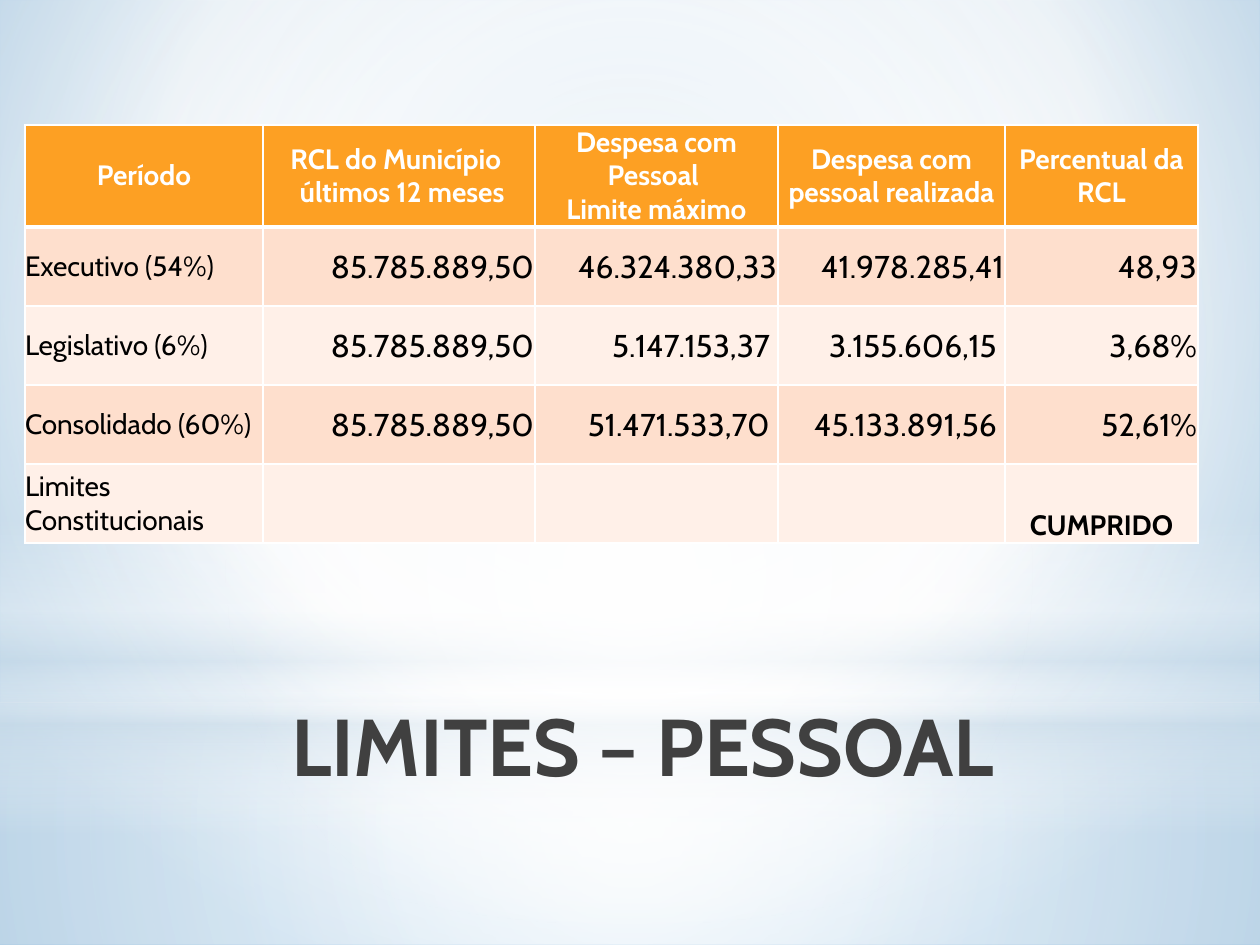
"""Build the slide on personnel spending limits."""
from dataclasses import dataclass

from lxml import etree
from pptx import Presentation
from pptx.dml.color import RGBColor
from pptx.enum.shapes import MSO_SHAPE
from pptx.enum.text import MSO_ANCHOR, PP_ALIGN
from pptx.oxml.ns import qn
from pptx.util import Emu, Pt

RECTANGLE, OVAL = MSO_SHAPE.RECTANGLE, MSO_SHAPE.OVAL
LEFT, CENTER, RIGHT = PP_ALIGN.LEFT, PP_ALIGN.CENTER, PP_ALIGN.RIGHT
TOP, MIDDLE, BOTTOM = MSO_ANCHOR.TOP, MSO_ANCHOR.MIDDLE, MSO_ANCHOR.BOTTOM
EMU_PER_PX = 914400 / 126
FONT = "Cabin"

WHITE = RGBColor(0xFF, 0xFF, 0xFF)
BLACK = RGBColor(0x00, 0x00, 0x00)
CHARCOAL = RGBColor(0x40, 0x40, 0x40)
ORANGE = RGBColor(0xFD, 0xA0, 0x23)
PEACH = RGBColor(0xFE, 0xDF, 0xCD)
CREAM = RGBColor(0xFF, 0xF0, 0xE8)
MIST = RGBColor(0xCC, 0xDD, 0xEA)
PALE_BLUE = RGBColor(0xBC, 0xD5, 0xE8)
SKY = RGBColor(0x82, 0xB6, 0xDE)


@dataclass(frozen=True)
class Stop:
    position: int
    color: RGBColor
    opacity: int = 100


@dataclass(frozen=True)
class Gradient:
    stops: tuple[Stop, ...]
    focus: tuple[int, int, int, int] | None = (50, 50, 50, 50)


@dataclass(frozen=True)
class Glow:
    kind: MSO_SHAPE
    box: tuple[int, int, int, int]
    gradient: Gradient


@dataclass(frozen=True)
class TextStyle:
    size: int
    color: RGBColor
    bold: bool
    align: PP_ALIGN
    anchor: MSO_ANCHOR
    inset: int = 0


BACKDROP = Gradient((Stop(0, PALE_BLUE), Stop(60, WHITE), Stop(100, SKY)), (20, 10, 20, 60))
GLOWS = (
    Glow(RECTANGLE, (0, 703, 1260, 242),
         Gradient((Stop(0, WHITE, 91), Stop(37, WHITE, 76), Stop(100, MIST, 79)))),
    Glow(RECTANGLE, (0, 0, 1260, 703),
         Gradient((Stop(0, WHITE, 89), Stop(48, WHITE, 62), Stop(100, MIST, 79)))),
    Glow(RECTANGLE, (0, 519, 1260, 315),
         Gradient((Stop(0, WHITE, 0), Stop(29, WHITE, 30), Stop(45, MIST, 40),
                   Stop(55, WHITE, 26), Stop(65, MIST, 60), Stop(100, WHITE, 0)), None)),
    Glow(OVAL, (0, 220, 1260, 703), Gradient((Stop(0, WHITE), Stop(56, WHITE, 0)))),
)

TITLE_STYLE = TextStyle(46, CHARCOAL, True, CENTER, TOP)
HEADER_STYLE = TextStyle(16, WHITE, True, CENTER, MIDDLE)
LABEL_STYLE = TextStyle(16, BLACK, False, LEFT, MIDDLE)
NUMBER_STYLE = TextStyle(18, BLACK, False, RIGHT, MIDDLE, 1)
VERDICT_STYLE = TextStyle(16, BLACK, True, CENTER, BOTTOM)

COLUMN_WIDTHS = (238, 272, 243, 227, 193)
ROW_HEIGHTS = (102, 79, 79, 79, 79)
ROWS = (
    ("Período", "RCL do Município \n últimos 12 meses", "Despesa com Pessoal \nLimite máximo",
     "Despesa com pessoal realizada", "Percentual da RCL"),
    ("Executivo (54%)", "85.785.889,50", "46.324.380,33", "41.978.285,41", "48,93"),
    ("Legislativo (6%)", "85.785.889,50", "5.147.153,37 ", "3.155.606,15 ", "3,68%"),
    ("Consolidado (60%)", "85.785.889,50", "51.471.533,70 ", "45.133.891,56 ", "52,61%"),
    ("Limites Constitucionais", "", "", "", "CUMPRIDO"),
)


def px(length: int) -> Emu:
    """Turn pixels into EMU."""
    return Emu(round(length * EMU_PER_PX))


def apply_gradient(owner, gradient: Gradient) -> None:
    """Swap the solid fill inside an element for a gradient."""
    fill = etree.Element(qn("a:gradFill"), rotWithShape="1")
    stops = etree.SubElement(fill, qn("a:gsLst"))
    for stop in gradient.stops:
        entry = etree.SubElement(stops, qn("a:gs"), pos=str(stop.position * 1000))
        color = etree.SubElement(entry, qn("a:srgbClr"), val=str(stop.color))
        if stop.opacity < 100:
            etree.SubElement(color, qn("a:alpha"), val=str(stop.opacity * 1000))
    if gradient.focus is None:
        etree.SubElement(fill, qn("a:lin"), ang="5400000", scaled="0")
    else:
        circle = etree.SubElement(fill, qn("a:path"), path="circle")
        sides = {side: str(value * 1000) for side, value in zip("ltrb", gradient.focus)}
        etree.SubElement(circle, qn("a:fillToRect"), **sides)
    solid = owner.find(".//" + qn("a:solidFill"))
    solid.getparent().replace(solid, fill)


def draw_glow(page, glow: Glow) -> None:
    """Draw one soft layer of the backdrop."""
    shape = page.shapes.add_shape(glow.kind, *map(px, glow.box))
    shape.shadow.inherit = False
    shape.line.fill.background()
    shape.fill.solid()
    apply_gradient(shape.element, glow.gradient)


def write_text(frame, text: str, style: TextStyle) -> None:
    """Write one paragraph for each line of the text."""
    for index, line in enumerate(text.split("\n")):
        para = frame.add_paragraph() if index else frame.paragraphs[0]
        para.alignment = style.align
        span = para.add_run()
        span.text = line
        font_format = {"name": FONT, "size": Pt(style.size), "bold": style.bold}
        for name, value in font_format.items():
            setattr(span.font, name, value)
        span.font.color.rgb = style.color


def draw_title(page) -> None:
    """Draw the slide title."""
    box = page.shapes.add_textbox(*map(px, (194, 690, 897, 158)))
    box.text_frame.word_wrap = True
    box.text_frame.vertical_anchor = TITLE_STYLE.anchor
    write_text(box.text_frame, "LIMITES – PESSOAL", TITLE_STYLE)


def cell_style(row: int, column: int) -> TextStyle:
    """Choose the text style for a place in the table."""
    if row == 0:
        return HEADER_STYLE
    if column == 0:
        return LABEL_STYLE
    return VERDICT_STYLE if row == len(ROWS) - 1 else NUMBER_STYLE


def draw_borders(cell, row: int) -> None:
    """Draw white cell borders, thicker under the header."""
    widths = {"lnL": 1, "lnR": 1, "lnT": 3 if row == 1 else 1, "lnB": 3 if row == 0 else 1}
    properties = cell._tc.get_or_add_tcPr()
    for side, width in widths.items():
        line = etree.SubElement(properties, qn("a:" + side), w=str(Pt(width)))
        solid = etree.SubElement(line, qn("a:solidFill"))
        etree.SubElement(solid, qn("a:srgbClr"), val=str(WHITE))


def draw_table(page) -> None:
    """Draw the table of spending limits."""
    box = (25, 125, sum(COLUMN_WIDTHS), sum(ROW_HEIGHTS))
    table = page.shapes.add_table(len(ROWS), len(COLUMN_WIDTHS), *map(px, box)).table
    for column, width in zip(table.columns, COLUMN_WIDTHS):
        column.width = px(width)
    for row, (height, texts) in enumerate(zip(ROW_HEIGHTS, ROWS)):
        table.rows[row].height = px(height)
        for column, text in enumerate(texts):
            cell, style = table.cell(row, column), cell_style(row, column)
            inset = px(style.inset)
            cell_format = {"vertical_anchor": style.anchor, "margin_left": inset,
                           "margin_right": inset, "margin_top": inset, "margin_bottom": 0}
            for name, value in cell_format.items():
                setattr(cell, name, value)
            draw_borders(cell, row)
            cell.fill.solid()
            cell.fill.fore_color.rgb = ORANGE if row == 0 else (CREAM, PEACH)[row % 2]
            if text:
                write_text(cell.text_frame, text, style)


def main() -> None:
    """Build and save the deck."""
    deck = Presentation()
    deck.slide_width, deck.slide_height = px(1260), px(945)
    page = deck.slides.add_slide(deck.slide_layouts[6])
    page.background.fill.solid()
    apply_gradient(page.element.find(".//" + qn("p:bgPr")), BACKDROP)
    for glow in GLOWS:
        draw_glow(page, glow)
    draw_title(page)
    draw_table(page)
    deck.save("out.pptx")


if __name__ == "__main__":
    main()
